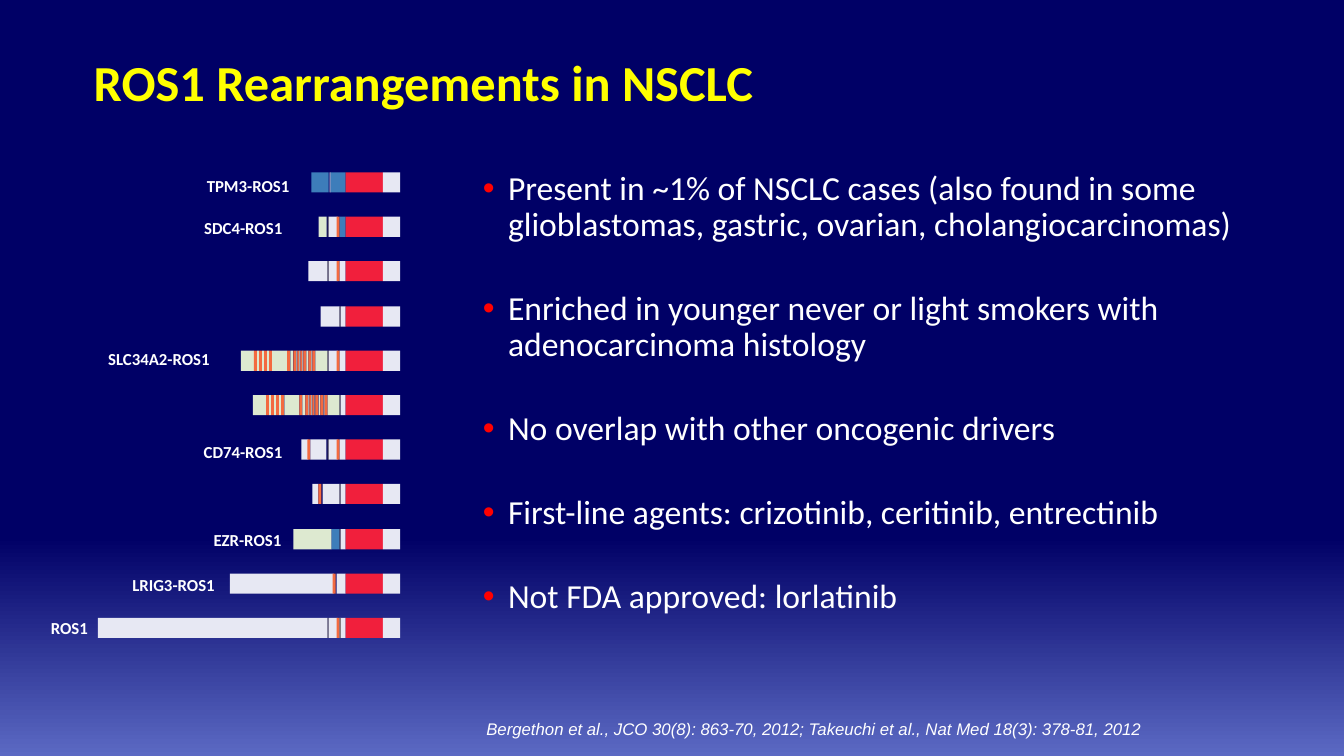
from lxml import etree
from pptx import Presentation
from pptx import util as u
from pptx.dml.color import RGBColor
from pptx.enum import shapes, text
from pptx.oxml import ns

PX = 9144  # EMU per px, 100 px to the inch
NAVY = RGBColor(0x00, 0x00, 0x66)
PERIWINKLE = RGBColor(0x5B, 0x69, 0xC3)
YELLOW = RGBColor(0xFF, 0xFF, 0x00)
WHITE = RGBColor(0xFF, 0xFF, 0xFF)
PALE = RGBColor(0xE7, 0xE8, 0xF3)
RED = RGBColor(0xF1, 0x1F, 0x3C)
BLUE = RGBColor(0x3D, 0x7D, 0xBA)
GREEN = RGBColor(0xDD, 0xE9, 0xD0)
ORANGE = RGBColor(0xF3, 0x6A, 0x40)
DARK = RGBColor(0x4F, 0x45, 0x44)


def place(shape, left, top, width, height):
    shape.left, shape.top = left * PX, top * PX
    shape.width, shape.height = width * PX, height * PX


def style(paragraph, name, size, color, bold=False, italic=False):
    font = paragraph.font
    font.name, font.size, font.color.rgb = name, u.Pt(size), color
    font.bold, font.italic = bold, italic


presentation = Presentation()
presentation.slide_width, presentation.slide_height = u.Emu(12192000), 750 * PX
slide = presentation.slides.add_slide(presentation.slide_layouts[1])

# Background gradient, top to bottom
background = slide.background.fill
background.gradient()
background.gradient_angle = 270
for stop, position, color in zip(background.gradient_stops, (0.71, 1), (NAVY, PERIWINKLE)):
    stop.position, stop.color.rgb = position, color

# Title
title = slide.shapes.title
place(title, 83, 49, 882, 71)
title.text_frame.text = "ROS1 Rearrangements in NSCLC"
title.text_frame.vertical_anchor = text.MSO_ANCHOR.MIDDLE
title.text_frame.auto_size = text.MSO_AUTO_SIZE.NONE
heading = title.text_frame.paragraphs[0]
heading.alignment, heading.line_spacing = text.PP_ALIGN.LEFT, 0.9
style(heading, "Calibri", 36, YELLOW, bold=True)

# Bullet list
POINTS = [
    "Present in ~1% of NSCLC cases (also found in some glioblastomas, gastric, ovarian, cholangiocarcinomas)",
    "Enriched in younger never or light smokers with adenocarcinoma histology",
    "No overlap with other oncogenic drivers",
    "First-line agents: crizotinib, ceritinib, entrectinib",
    "Not FDA approved: lorlatinib",
]
body = slide.placeholders[1]
place(body, 469, 165, 846, 347)
body.text_frame.text = "\n".join(POINTS)
body.text_frame.auto_size = text.MSO_AUTO_SIZE.NONE
for index, paragraph in enumerate(body.text_frame.paragraphs):
    properties = paragraph._p.get_or_add_pPr()
    properties.set("marL", str(25 * PX))
    properties.set("indent", str(-25 * PX))
    bullet_color = etree.SubElement(properties, ns.qn("a:buClr"))
    etree.SubElement(bullet_color, ns.qn("a:srgbClr"), val="FF0000")
    etree.SubElement(properties, ns.qn("a:buFont"), typeface="Arial")
    etree.SubElement(properties, ns.qn("a:buChar"), char="•")
    paragraph.line_spacing = 0.9
    paragraph.space_before = u.Pt(10 if index else 0)
    paragraph.space_after = u.Pt(24)
    style(paragraph, "Calibri", 24, WHITE)

# Fusion bars: (fill, left, width) segments, one list per row
LONG_EXONS = [(DARK, 325, 1), (PALE, 326, 9), (ORANGE, 334, 3), (PALE, 337, 6)]
SHORT_EXONS = [(DARK, 337, 1), (PALE, 338, 5)]
KINASE = [(RED, 343, 37), (PALE, 380, 17)]

# Alternating green and orange stripes of the two SLC34A2 bars
EDGES = [251, 264, 267, 269, 272, 274, 277, 279, 282, 297, 300, 303,
         306, 307, 309, 310, 312, 313, 316, 318, 321, 322, 325, 337]
stripes = [(ORANGE if index % 2 else GREEN, start, end - start)
           for index, (start, end) in enumerate(zip(EDGES, EDGES[1:]))]
shifted_stripes = [(fill, left - 12, width) for fill, left, width in stripes]

ROWS = [
    [(BLUE, 309, 17), (PALE, 327, 1), (BLUE, 328, 15)],
    [(GREEN, 316, 8)] + LONG_EXONS[:3] + [(BLUE, 337, 6)],
    [(PALE, 306, 19)] + LONG_EXONS,
    [(PALE, 318, 19)] + SHORT_EXONS,
    shifted_stripes + LONG_EXONS,
    stripes + SHORT_EXONS,
    [(PALE, 299, 7), (ORANGE, 305, 3), (PALE, 308, 16)] + LONG_EXONS,
    [(PALE, 310, 6), (ORANGE, 316, 3), (PALE, 320, 17)] + SHORT_EXONS,
    [(GREEN, 291, 38), (BLUE, 329, 8)] + SHORT_EXONS,
    [(PALE, 228, 103), (ORANGE, 330, 3), (PALE, 334, 9)],
    [(PALE, 97, 228)] + LONG_EXONS + [(DARK, 337, 1)],
]
FIRST_ROW, LAST_ROW = 171, 613
row_pitch = (LAST_ROW - FIRST_ROW) / (len(ROWS) - 1)
bars = slide.shapes.add_group_shape()
for row, segments in enumerate(ROWS):
    top = round(FIRST_ROW + row * row_pitch)
    for fill, left, width in segments + KINASE:
        segment = bars.shapes.add_shape(
            shapes.MSO_SHAPE.RECTANGLE, left * PX, top * PX, width * PX, 20 * PX)
        segment.shadow.inherit = False
        segment.fill.solid()
        segment.fill.fore_color.rgb = fill
        segment.line.fill.background()

# Fusion names: label, left, top, width
LABELS = [
    ("TPM3-ROS1", 157, 169, 140),
    ("SDC4-ROS1", 156, 211, 134),
    ("SLC34A2-ROS1", 52, 341, 166),
    ("CD74-ROS1", 155, 433, 135),
    ("EZR-ROS1", 169, 521, 120),
    ("LRIG3-ROS1", 83, 565, 140),
    ("ROS1", 19, 608, 78),
]
for name, left, top, width in LABELS:
    label = slide.shapes.add_textbox(left * PX, top * PX, width * PX, 30 * PX)
    frame = label.text_frame
    frame.word_wrap, frame.vertical_anchor = True, text.MSO_ANCHOR.MIDDLE
    frame.text = name
    frame.paragraphs[0].alignment = text.PP_ALIGN.RIGHT
    style(frame.paragraphs[0], "Calibri", 12, WHITE, bold=True)

# Citation
citation = slide.shapes.add_textbox(467 * PX, 708 * PX, 676 * PX, 30 * PX)
frame = citation.text_frame
frame.word_wrap, frame.vertical_anchor = False, text.MSO_ANCHOR.BOTTOM
frame.text = "Bergethon et al., JCO 30(8): 863-70, 2012; Takeuchi et al., Nat Med 18(3): 378-81, 2012"
frame.paragraphs[0].alignment = text.PP_ALIGN.RIGHT
style(frame.paragraphs[0], "Arial", 12, WHITE, italic=True)

presentation.save("out.pptx")
